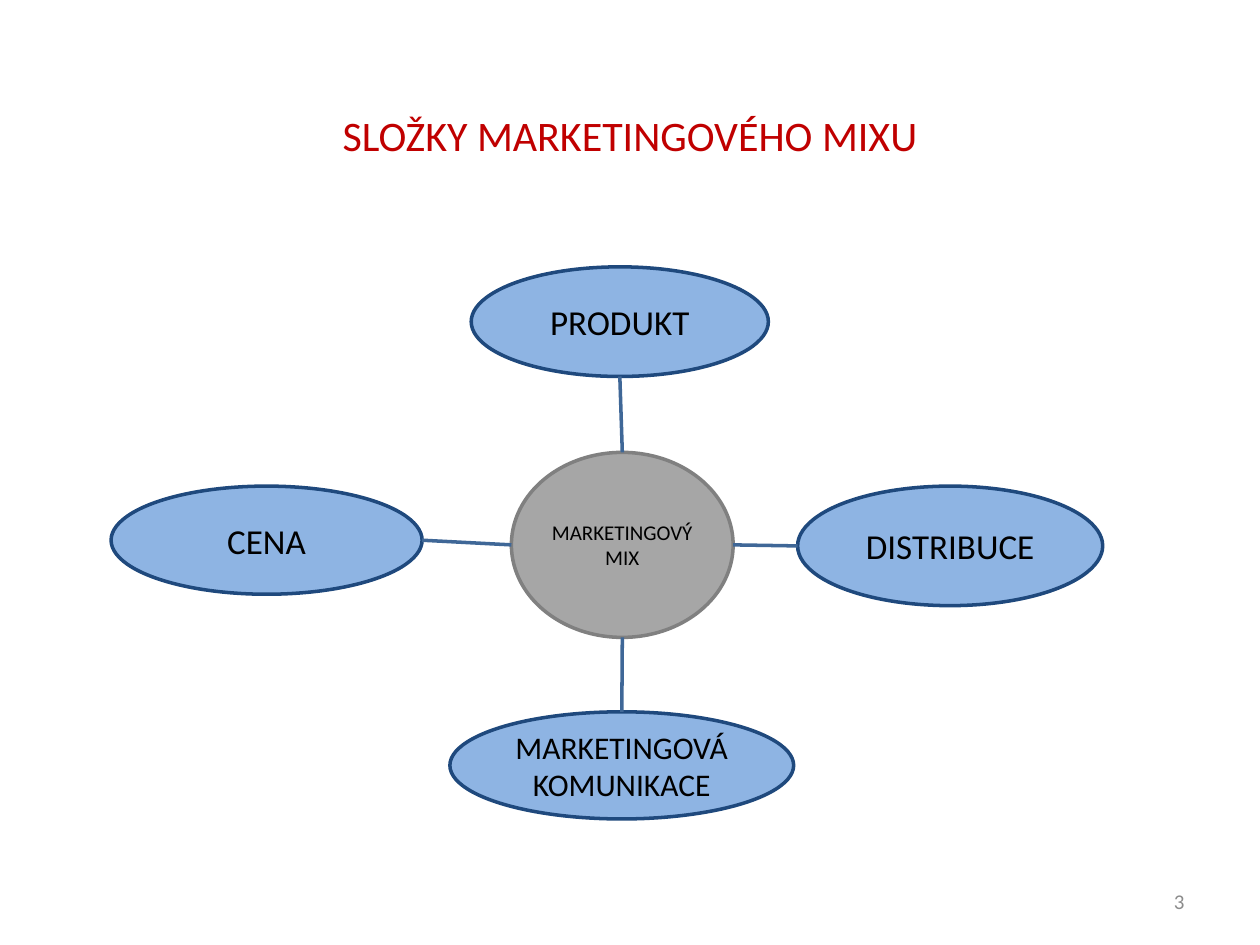
import pptx
import pptx.dml.color
import pptx.enum.shapes
import pptx.enum.text
import pptx.oxml.ns
import pptx.util
import lxml.etree

Cm = pptx.util.Cm
Pt = pptx.util.Pt
RGB = pptx.dml.color.RGBColor.from_string
ALIGN = pptx.enum.text.PP_ALIGN

THEME = {
    "font": "Calibri",
    "title": RGB("C00000"),
    "text": RGB("000000"),
    "number": RGB("8C8C8C"),
    "hub": (RGB("A6A6A6"), RGB("808080")),
    "component": (RGB("8EB4E3"), RGB("1F497D")),
    "link": RGB("3F6797"),
    "line": Pt(2),
    "title_size": Pt(24),
    "label_size": Pt(20),
    "long_label_size": Pt(18),
    "small_size": Pt(12),
}


def write_text(shape, text, size, color, alignment=ALIGN.CENTER, inset=Cm(0.03)):
    frame_format = {
        "word_wrap": True,
        "vertical_anchor": pptx.enum.text.MSO_ANCHOR.MIDDLE,
        "margin_left": inset,
        "margin_right": inset,
        "margin_top": inset,
        "margin_bottom": inset,
    }
    for name, value in frame_format.items():
        setattr(shape.text_frame, name, value)
    paragraph = shape.text_frame.paragraphs[0]
    paragraph.alignment = alignment
    run = paragraph.add_run()
    run.text = text
    for name, value in {"name": THEME["font"], "size": size}.items():
        setattr(run.font, name, value)
    run.font.color.rgb = color


def add_ellipse(box, text, size, colors):
    shape = slide.shapes.add_shape(
        pptx.enum.shapes.MSO_SHAPE.OVAL, *[Cm(value) for value in box]
    )
    shape.shadow.inherit = False
    shape.fill.solid()
    shape.fill.fore_color.rgb, shape.line.color.rgb = colors
    shape.line.width = THEME["line"]
    write_text(shape, text, size, THEME["text"])
    return shape


presentation = pptx.Presentation()
presentation.slide_width = Cm(25.4)
presentation.slide_height = Cm(19.05)
slide = presentation.slides.add_slide(presentation.slide_layouts[6])

title = slide.shapes.add_textbox(Cm(1.27), Cm(1.85), Cm(22.86), Cm(1.75))
write_text(title, "SLOŽKY MARKETINGOVÉHO MIXU", THEME["title_size"], THEME["title"])

hub = add_ellipse(
    (10.31, 9.12, 4.47, 3.73), "MARKETINGOVÝ MIX", THEME["small_size"], THEME["hub"]
)

components = [
    ("PRODUKT", (9.5, 5.38, 5.99, 2.21), "label_size", (0.5, 0)),
    ("DISTRIBUCE", (16.08, 9.8, 6.15, 2.41), "label_size", (1, 0.5)),
    ("MARKETINGOVÁ KOMUNIKACE", (9.07, 14.35, 6.93, 2.16), "long_label_size", (0.5, 1)),
    ("CENA", (2.24, 9.8, 6.27, 2.18), "label_size", (0, 0.5)),
]
for text, box, size, (across, down) in components:
    component = add_ellipse(box, text, THEME[size], THEME["component"])
    link = slide.shapes.add_connector(
        pptx.enum.shapes.MSO_CONNECTOR.STRAIGHT,
        int(hub.left + across * hub.width),
        int(hub.top + down * hub.height),
        int(component.left + (1 - across) * component.width),
        int(component.top + (1 - down) * component.height),
    )
    link.line.color.rgb = THEME["link"]
    link.line.width = THEME["line"]
    lxml.etree.SubElement(link._element.spPr, pptx.oxml.ns.qn("a:effectLst"))

slide_number = slide.shapes.add_textbox(Cm(18.21), Cm(17.65), Cm(5.92), Cm(1.02))
write_text(
    slide_number, "3", THEME["small_size"], THEME["number"], ALIGN.RIGHT, Cm(0.25)
)

presentation.save("out.pptx")
